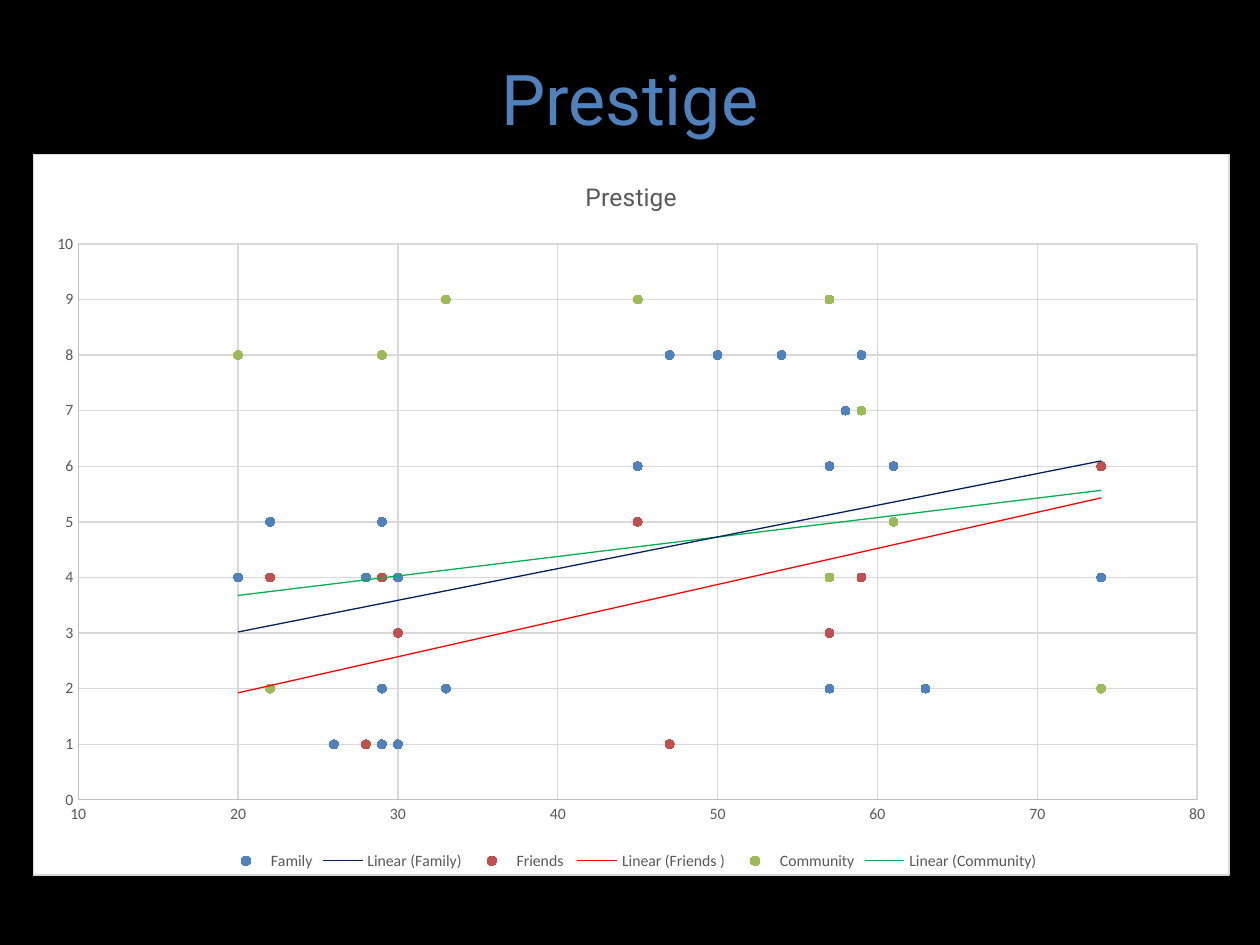
from dataclasses import dataclass

import lxml.etree
import pptx
import pptx.chart.data
import pptx.dml.color
import pptx.dml.line
import pptx.enum.chart
import pptx.enum.text
import pptx.oxml
import pptx.oxml.ns
import pptx.text.text
import pptx.util

Inches = pptx.util.Inches
Pt = pptx.util.Pt
RGBColor = pptx.dml.color.RGBColor
qn = pptx.oxml.ns.qn

BLACK = RGBColor(0x00, 0x00, 0x00)
WHITE = RGBColor(0xFF, 0xFF, 0xFF)
BLUE = RGBColor(0x4F, 0x81, 0xBD)
RED = RGBColor(0xC0, 0x50, 0x4D)
GREEN = RGBColor(0x9B, 0xBB, 0x59)
TREND_NAVY = RGBColor(0x00, 0x20, 0x60)
TREND_RED = RGBColor(0xFF, 0x00, 0x00)
TREND_GREEN = RGBColor(0x00, 0xB0, 0x50)
GRAY_TEXT = RGBColor(0x59, 0x59, 0x59)
GRAY_AXIS = RGBColor(0xBF, 0xBF, 0xBF)
GRAY_GRID = RGBColor(0xD9, 0xD9, 0xD9)

LINE_WIDTH = Pt(0.75)
HEADING = "Prestige"


@dataclass(frozen=True)
class Group:
    name: str
    scores: tuple[int, ...]
    color: RGBColor
    trend_color: RGBColor


AGES = (20, 22, 26, 28, 29, 29, 29, 29, 29, 30, 30, 33,
        45, 47, 50, 54, 57, 57, 57, 58, 59, 61, 63, 74)
GROUPS = (
    Group("Family", (4, 5, 1, 4, 2, 5, 5, 2, 1, 1, 4, 2,
                     6, 8, 8, 8, 2, 6, 2, 7, 8, 6, 2, 4), BLUE, TREND_NAVY),
    Group("Friends ", (4, 4, 1, 1, 2, 4, 2, 2, 1, 1, 3, 2,
                       5, 1, 8, 8, 2, 3, 2, 7, 4, 6, 2, 6), RED, TREND_RED),
    Group("Community", (8, 2, 1, 1, 8, 5, 2, 2, 1, 1, 3, 9,
                        9, 1, 8, 8, 9, 4, 2, 7, 7, 5, 2, 2), GREEN, TREND_GREEN),
)


def style_font(font: pptx.text.text.Font, name: str, size: float, color: RGBColor) -> None:
    font.name = name
    font.size = Pt(size)
    font.bold = False
    font.color.rgb = color


def style_line(line: pptx.dml.line.LineFormat, color: RGBColor) -> None:
    line.color.rgb = color
    line.width = LINE_WIDTH


def line_xml(color: RGBColor) -> str:
    return (f'<a:ln w="{int(LINE_WIDTH)}"><a:solidFill><a:srgbClr val="{color}"/>'
            '</a:solidFill></a:ln>')


def chart_part(tag: str, content: str) -> lxml.etree._Element:
    namespaces = pptx.oxml.ns.nsdecls("c", "a")
    return pptx.oxml.parse_xml(f"<c:{tag} {namespaces}>{content}</c:{tag}>")


def style_axis(axis, minimum: int, maximum: int, step: int) -> None:
    axis.minimum_scale = minimum
    axis.maximum_scale = maximum
    axis.major_unit = step
    axis.major_tick_mark = pptx.enum.chart.XL_TICK_MARK.NONE
    axis.minor_tick_mark = pptx.enum.chart.XL_TICK_MARK.NONE
    axis.has_major_gridlines = True
    style_line(axis.major_gridlines.format.line, GRAY_GRID)
    style_line(axis.format.line, GRAY_AXIS)
    style_font(axis.tick_labels.font, "Calibri", 9, GRAY_TEXT)


def style_series(series, group: Group) -> None:
    series.format.line.fill.background()
    marker = series.marker
    marker.style = pptx.enum.chart.XL_MARKER_STYLE.CIRCLE
    marker.size = 5
    marker.format.fill.solid()
    marker.format.fill.fore_color.rgb = group.color
    style_line(marker.format.line, group.color)
    # Linear trend line, placed before the x values as the schema asks
    trend = chart_part("trendline", f"<c:spPr>{line_xml(group.trend_color)}</c:spPr>"
                       '<c:trendlineType val="linear"/><c:dispRSqr val="0"/>'
                       '<c:dispEq val="0"/>')
    series._element.find(qn("c:xVal")).addprevious(trend)


def add_scatter(slide) -> None:
    data = pptx.chart.data.XyChartData()
    for group in GROUPS:
        points = data.add_series(group.name)
        for age, score in zip(AGES, group.scores):
            points.add_data_point(age, score)
    chart = slide.shapes.add_chart(
        pptx.enum.chart.XL_CHART_TYPE.XY_SCATTER,
        Inches(0.26), Inches(1.22), Inches(9.5), Inches(5.73), data).chart
    style_font(chart.font, "Calibri", 10, BLACK)

    # White chart area with a thin border
    area = chart_part("spPr", f'<a:solidFill><a:srgbClr val="{WHITE}"/></a:solidFill>'
                      + line_xml(GRAY_GRID))
    chart._chartSpace.find(qn("c:chart")).addnext(area)

    # Chart title
    chart.has_title = True
    chart.chart_title.include_in_layout = False
    paragraph = chart.chart_title.text_frame.paragraphs[0]
    paragraph.text = HEADING
    style_font(paragraph.font, "Roboto", 14, GRAY_TEXT)

    # Axes, series and legend
    style_axis(chart.category_axis, 10, 80, 10)
    style_axis(chart.value_axis, 0, 10, 1)
    chart.plots[0].vary_by_categories = False
    for series, group in zip(chart.plots[0].series, GROUPS):
        series.smooth = False
        style_series(series, group)
    chart.has_legend = True
    chart.legend.position = pptx.enum.chart.XL_LEGEND_POSITION.BOTTOM
    chart.legend.include_in_layout = False
    style_font(chart.legend.font, "Calibri", 9, GRAY_TEXT)


def main() -> None:
    presentation = pptx.Presentation()
    presentation.slide_width = Inches(10)
    presentation.slide_height = Inches(7.5)
    slide = presentation.slides.add_slide(presentation.slide_layouts[5])
    slide.background.fill.solid()
    slide.background.fill.fore_color.rgb = BLACK

    # Slide title
    title = slide.shapes.title
    title.left, title.top = Inches(0.5), Inches(0.27)
    title.width, title.height = Inches(9), Inches(1)
    title.text_frame.vertical_anchor = pptx.enum.text.MSO_ANCHOR.MIDDLE
    paragraph = title.text_frame.paragraphs[0]
    paragraph.text = HEADING
    paragraph.alignment = pptx.enum.text.PP_ALIGN.CENTER
    style_font(paragraph.font, "Roboto", 40, BLUE)

    add_scatter(slide)
    presentation.save("out.pptx")


if __name__ == "__main__":
    main()
